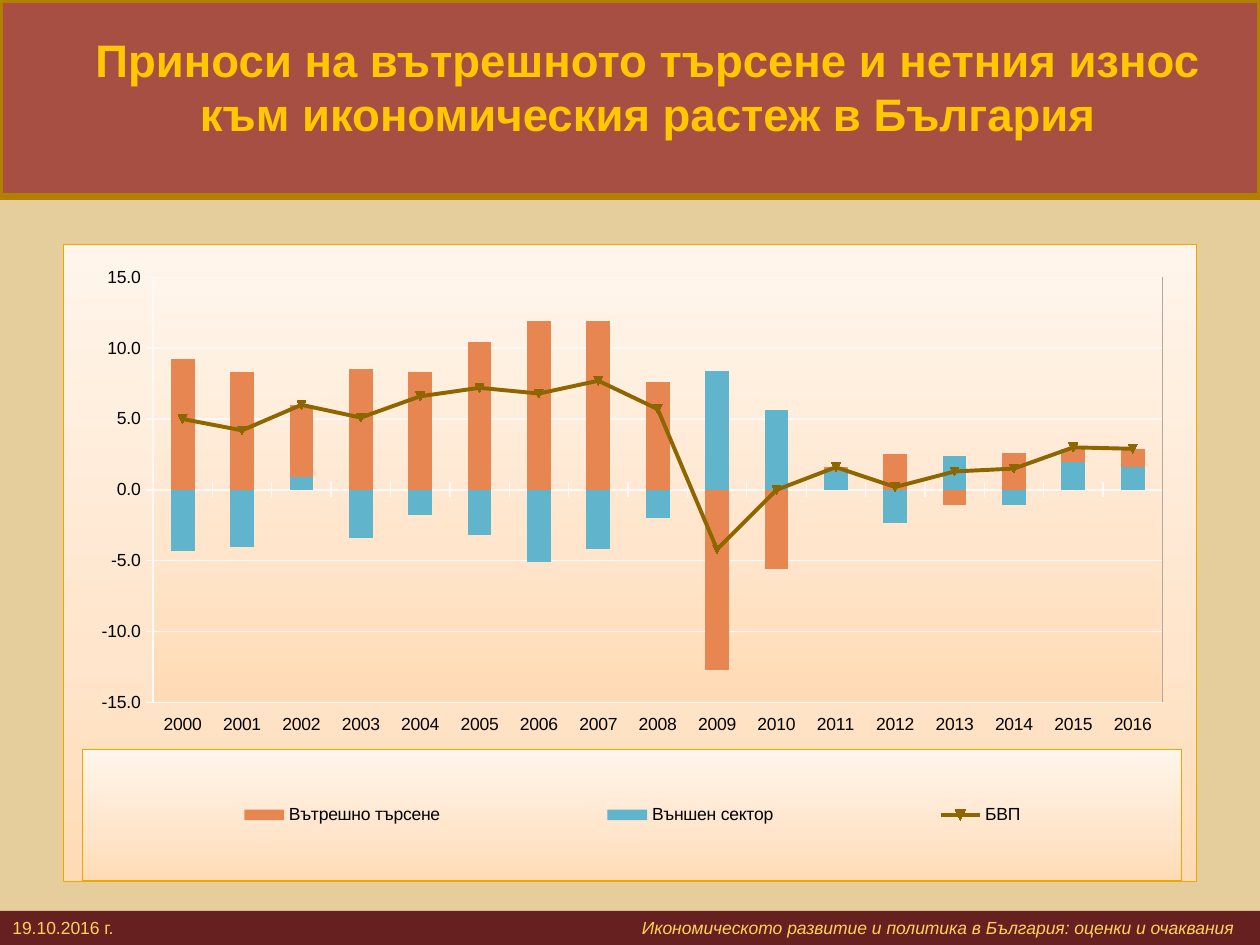
from lxml.etree import SubElement
from pptx import Presentation
from pptx.chart.data import CategoryChartData
from pptx.dml.color import RGBColor
from pptx.enum.chart import (XL_CHART_TYPE, XL_LEGEND_POSITION, XL_MARKER_STYLE,
                             XL_TICK_LABEL_POSITION, XL_TICK_MARK)
from pptx.enum.shapes import MSO_SHAPE
from pptx.enum.text import MSO_ANCHOR, PP_ALIGN
from pptx.oxml import parse_xml
from pptx.oxml.ns import nsdecls, qn
from pptx.util import Inches, Pt

BACKGROUND = RGBColor(0xE5, 0xCD, 0x9C)
HEADER = RGBColor(0xA8, 0x4F, 0x44)
HEADER_LINE = RGBColor(0xB2, 0x80, 0x00)
TITLE = RGBColor(0xFF, 0xC8, 0x00)
FOOTER = RGBColor(0x67, 0x20, 0x20)
FOOTER_TEXT = RGBColor(0xFF, 0xD2, 0x5D)
GRID = RGBColor(0xF9, 0xF9, 0xF9)
BLACK = RGBColor(0, 0, 0)
BLUE = RGBColor(0x60, 0xB5, 0xCC)
ORANGE = RGBColor(0xE8, 0x86, 0x51)
BROWN = RGBColor(0x8D, 0x66, 0x00)
PANEL_LINE = RGBColor(0xEB, 0xA9, 0x00)
SECOND_AXIS = RGBColor(0xB3, 0xA8, 0x9C)
PANEL_STOPS = ((0, RGBColor(0xFF, 0xDB, 0xB5)), (35, RGBColor(0xFF, 0xE5, 0xCB)),
               (100, RGBColor(0xFF, 0xF5, 0xEB)))
FONT = "Arial"

YEARS = [str(year) for year in range(2000, 2017)]
SERIES = (
    ("Външен сектор", BLUE, (-4.3, -4.0, 0.9, -3.4, -1.8, -3.2, -5.1, -4.2, -2.0,
                             8.4, 5.6, 1.3, -2.3, 2.4, -1.1, 2.0, 1.6)),
    ("Вътрешно търсене", ORANGE, (9.2, 8.3, 5.1, 8.5, 8.3, 10.4, 11.9, 11.9, 7.6,
                                  -12.7, -5.6, 0.3, 2.5, -1.1, 2.6, 0.9, 1.3)),
    ("БВП", BROWN, (5.0, 4.2, 6.0, 5.1, 6.6, 7.2, 6.8, 7.7, 5.7,
                    -4.2, 0.0, 1.6, 0.2, 1.3, 1.5, 3.0, 2.9)),
)


def add_band(slide, top, height, color):
    """Add a full-width rectangle without an outline."""
    shape = slide.shapes.add_shape(MSO_SHAPE.RECTANGLE, 0, Inches(top), Inches(10), Inches(height))
    shape.shadow.inherit = False
    shape.fill.solid()
    shape.fill.fore_color.rgb = color
    shape.line.fill.background()
    return shape


def set_font(font, size, color, bold=False):
    """Set typeface, size, colour and weight."""
    font.name, font.size, font.bold = FONT, Pt(size), bold
    font.color.rgb = color


def add_title(slide, text):
    """Add the centred slide title."""
    box = slide.shapes.add_textbox(Inches(0.62), 0, Inches(9), Inches(1.37))
    frame = box.text_frame
    frame.word_wrap = True
    frame.vertical_anchor = MSO_ANCHOR.MIDDLE
    frame.margin_right = Inches(0.05)
    paragraph = frame.paragraphs[0]
    paragraph.text = text
    paragraph.alignment = PP_ALIGN.CENTER
    set_font(paragraph.font, 26, TITLE, True)


def add_footer(slide, date, topic):
    """Add the footer band with a date and a right-tabbed topic."""
    frame = add_band(slide, 7.23, 0.27, FOOTER).text_frame
    frame.vertical_anchor = MSO_ANCHOR.MIDDLE
    paragraph = frame.paragraphs[0]
    paragraph.alignment = PP_ALIGN.LEFT
    set_font(paragraph.font, 10, FOOTER_TEXT)
    properties = paragraph._p.get_or_add_pPr()
    tabs = parse_xml(f'<a:tabLst {nsdecls("a")}><a:tab pos="{Inches(9.69)}" algn="r"/></a:tabLst>')
    properties.insert(0, tabs)
    paragraph.add_run().text = date + "\t"
    run = paragraph.add_run()
    run.text = topic
    run.font.italic = True


def panel_properties(outline=None):
    """Return chart shape properties with the panel gradient."""
    stops = "".join(f'<a:gs pos="{position * 1000}"><a:srgbClr val="{color}"/></a:gs>'
                    for position, color in PANEL_STOPS)
    fill = f'<a:solidFill><a:srgbClr val="{outline}"/></a:solidFill>' if outline else "<a:noFill/>"
    return parse_xml(f'<c:spPr {nsdecls("c", "a")}><a:gradFill><a:gsLst>{stops}</a:gsLst>'
                     f'<a:lin ang="16200000" scaled="0"/></a:gradFill>'
                     f'<a:ln w="{Pt(0.5)}">{fill}</a:ln></c:spPr>')


def set_layout(element, index, bounds, inner=False):
    """Place a chart part by fractions of the chart area."""
    for old in element.findall(qn("c:layout")):
        element.remove(old)
    layout = parse_xml(f'<c:layout {nsdecls("c")}><c:manualLayout/></c:layout>')
    settings = [("layoutTarget", "inner")] if inner else []
    settings += [("xMode", "edge"), ("yMode", "edge"), *zip("xywh", bounds)]
    for name, value in settings:
        SubElement(layout[0], qn("c:" + name)).set("val", str(value))
    element.insert(index, layout)


def style_axis(axis):
    """Give an axis light lines and ticks with labels at the low end."""
    axis.format.line.color.rgb = GRID
    axis.format.line.width = Pt(0.75)
    axis.major_tick_mark = XL_TICK_MARK.CROSS
    axis.minor_tick_mark = XL_TICK_MARK.NONE
    axis.tick_label_position = XL_TICK_LABEL_POSITION.LOW


def move_last_series_to_line(plot_area):
    """Turn the last column series into a line on a second axis."""
    bars = plot_area.find(qn("c:barChart"))
    series = bars.findall(qn("c:ser"))[-1]
    for child in series.findall(qn("c:invertIfNegative")):
        series.remove(child)
    line = parse_xml(f'<c:lineChart {nsdecls("c")}><c:grouping val="standard"/>'
                     '<c:varyColors val="0"/><c:marker val="1"/>'
                     '<c:axId val="1001"/><c:axId val="1002"/></c:lineChart>')
    line.insert(2, series)
    bars.addnext(line)
    axes = (("catAx", 1001, 1002, 1, "b", "", "autoZero"),
            ("valAx", 1002, 1001, 0, "r", '<c:max val="15"/><c:min val="-15"/>', "max"))
    for tag, own, other, deleted, side, limits, crossing in axes:
        plot_area.append(parse_xml(
            f'<c:{tag} {nsdecls("c", "a")}><c:axId val="{own}"/>'
            f'<c:scaling><c:orientation val="minMax"/>{limits}</c:scaling>'
            f'<c:delete val="{deleted}"/><c:axPos val="{side}"/>'
            '<c:majorTickMark val="none"/><c:minorTickMark val="none"/><c:tickLblPos val="none"/>'
            f'<c:spPr><a:ln w="{Pt(0.75)}"><a:solidFill><a:srgbClr val="{SECOND_AXIS}"/>'
            f'</a:solidFill></a:ln></c:spPr><c:crossAx val="{other}"/>'
            f'<c:crosses val="{crossing}"/></c:{tag}>'))


def add_growth_chart(slide):
    """Add stacked contributions with the growth line."""
    data = CategoryChartData(number_format="0.0")
    data.categories = YEARS
    for name, _, values in SERIES:
        data.add_series(name, values)
    chart = slide.shapes.add_chart(XL_CHART_TYPE.COLUMN_STACKED, Inches(0.5), Inches(1.94),
                                   Inches(9), Inches(5.06), data).chart
    set_font(chart.font, 10, BLACK)
    chart.has_title = False
    style_axis(chart.category_axis)
    axis = chart.value_axis
    style_axis(axis)
    axis.minimum_scale, axis.maximum_scale, axis.major_unit = -15, 15, 5
    axis.tick_labels.number_format = "0.0"
    axis.tick_labels.number_format_is_linked = False
    axis.major_gridlines.format.line.color.rgb = GRID
    axis.major_gridlines.format.line.width = Pt(0.75)

    chart_space = chart._chartSpace
    plot_area = chart_space.find(".//" + qn("c:plotArea"))
    move_last_series_to_line(plot_area)
    bars, line = chart.plots
    bars.gap_width, bars.overlap, bars.vary_by_categories = 150, 100, False
    for series, (_, color, _) in zip(bars.series, SERIES):
        series.invert_if_negative = False
        series.format.fill.solid()
        series.format.fill.fore_color.rgb = color
    growth = line.series[0]
    growth.smooth = False
    growth.format.line.color.rgb = BROWN
    growth.format.line.width = Pt(2.25)
    growth.marker.style = XL_MARKER_STYLE.AUTOMATIC
    growth.marker.size = 5
    growth.marker.format.fill.solid()
    growth.marker.format.fill.fore_color.rgb = BROWN
    growth.marker.format.line.fill.background()

    chart.has_legend = True
    chart.legend.position = XL_LEGEND_POSITION.RIGHT
    chart.legend.include_in_layout = False
    legend = chart_space.find(".//" + qn("c:legend"))
    set_layout(legend, 1, (0.017, 0.793, 0.97, 0.205))
    set_layout(plot_area, 0, (0.079, 0.051, 0.891, 0.668), inner=True)
    legend.append(panel_properties(PANEL_LINE))
    plot_area.append(panel_properties())
    chart_space.find(qn("c:chart")).addnext(panel_properties(PANEL_LINE))


def main():
    """Build and save the slide."""
    presentation = Presentation()
    presentation.slide_width, presentation.slide_height = Inches(10), Inches(7.5)
    slide = presentation.slides.add_slide(presentation.slide_layouts[6])
    slide.background.fill.solid()
    slide.background.fill.fore_color.rgb = BACKGROUND
    header = add_band(slide, 0, 1.56, HEADER)
    header.line.color.rgb = HEADER_LINE
    header.line.width = Pt(3.78)
    add_title(slide, "Приноси на вътрешното търсене и нетния износ към икономическия растеж в България")
    add_growth_chart(slide)
    add_footer(slide, "19.10.2016 г.", "Икономическото развитие и политика в България: оценки и очаквания")
    presentation.save("out.pptx")


if __name__ == "__main__":
    main()
